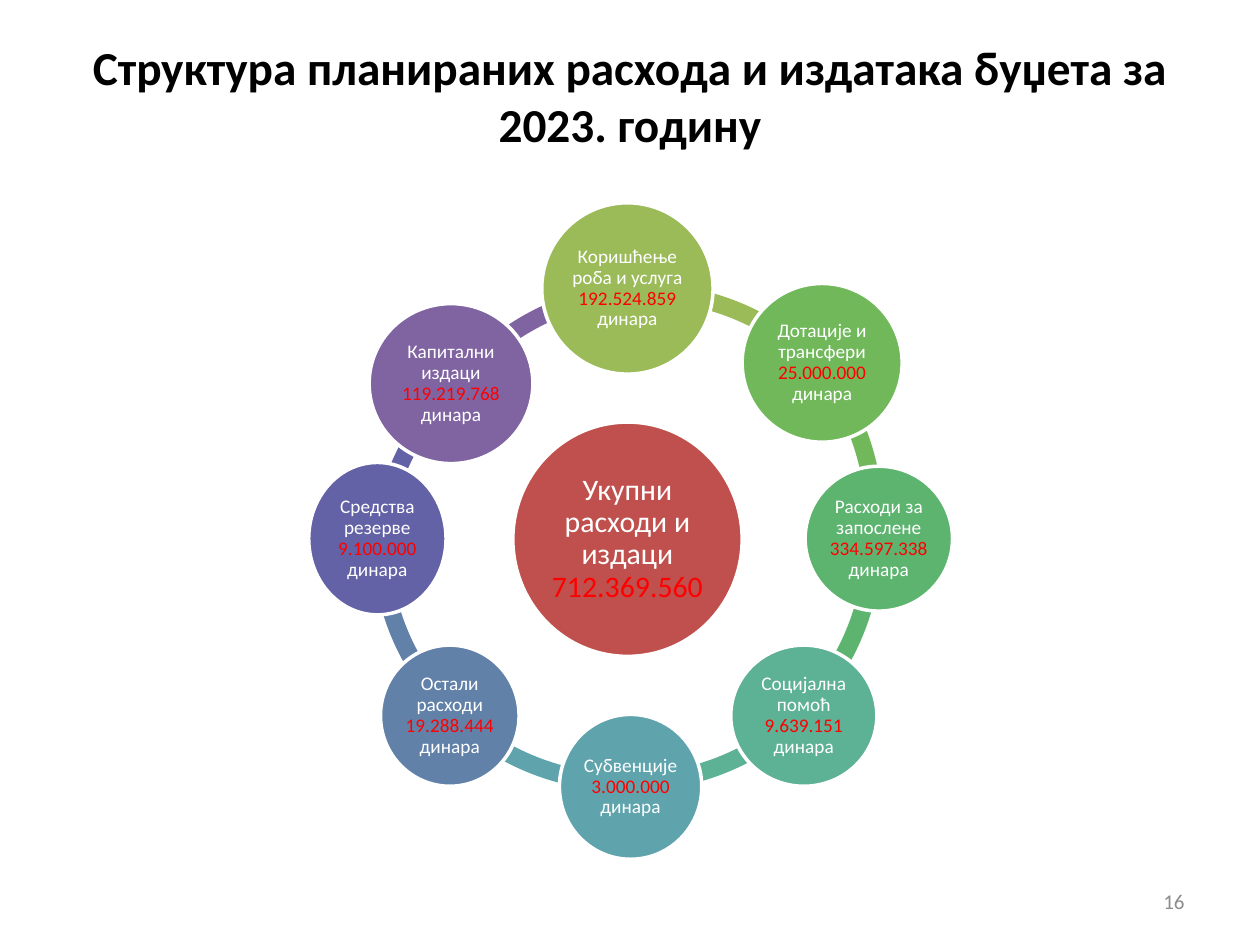
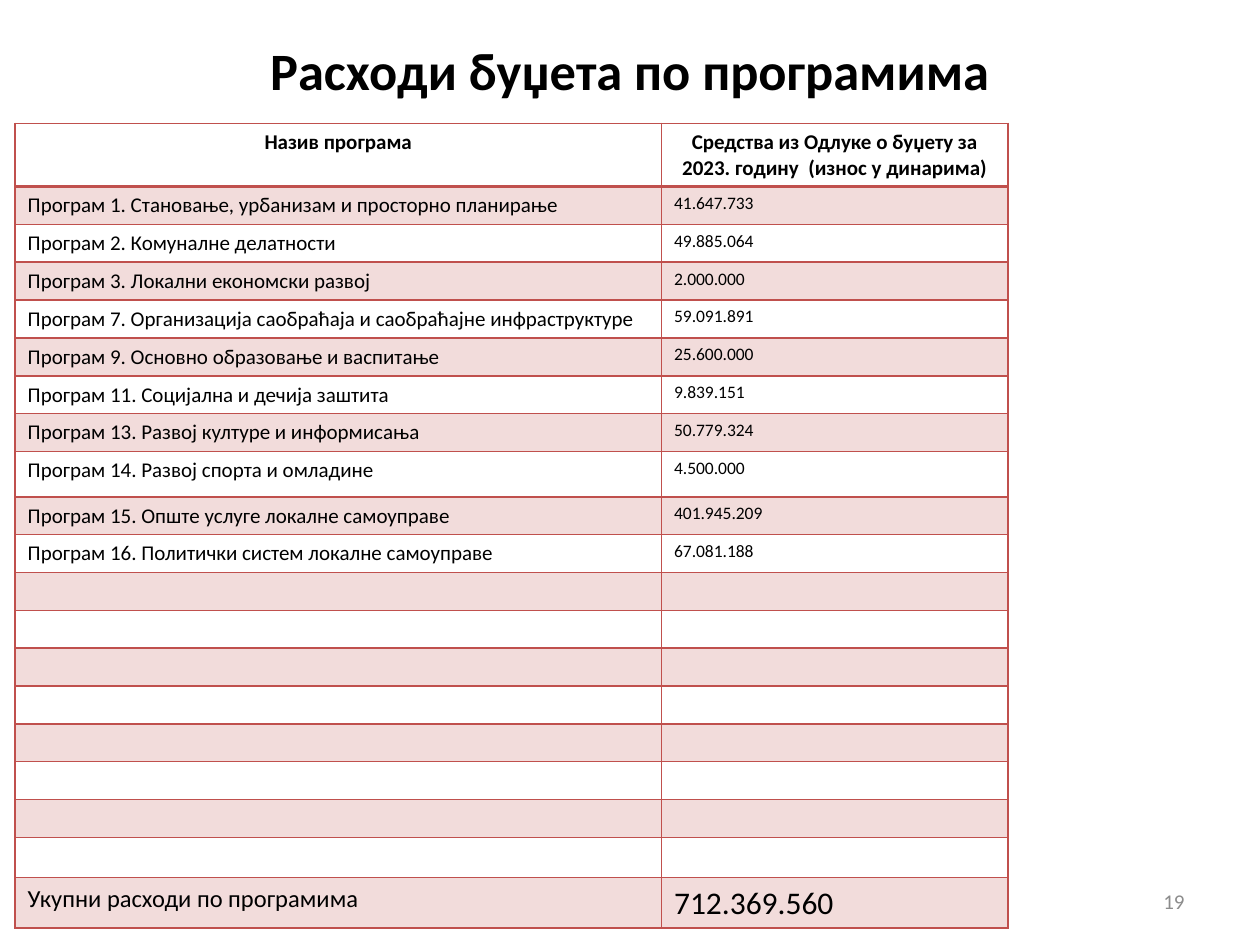
from dataclasses import dataclass
from typing import Any

from lxml import etree
from pptx import Presentation
from pptx.dml.color import RGBColor
from pptx.enum.lang import MSO_LANGUAGE_ID
from pptx.enum.shapes import MSO_SHAPE
from pptx.enum.text import MSO_ANCHOR, PP_ALIGN
from pptx.oxml.ns import qn
from pptx.util import Inches, Pt

LEFT, CENTER, RIGHT = PP_ALIGN.LEFT, PP_ALIGN.CENTER, PP_ALIGN.RIGHT
MIDDLE = MSO_ANCHOR.MIDDLE
ELLIPSE, BLOCK_ARC = MSO_SHAPE.OVAL, MSO_SHAPE.BLOCK_ARC
SERBIAN = MSO_LANGUAGE_ID.SERBIAN_CYRILLIC

FONT = "Calibri"
BLACK = RGBColor(0x00, 0x00, 0x00)
WHITE = RGBColor(0xFF, 0xFF, 0xFF)
GREY = RGBColor(0x8C, 0x8C, 0x8C)
BRICK = RGBColor(0xC0, 0x50, 0x4D)
PALE_BRICK = RGBColor(0xF2, 0xDC, 0xDB)
AMOUNT_RED = RGBColor(0xFF, 0x00, 0x00)
OLIVE = RGBColor(0x9B, 0xBB, 0x59)
LEAF = RGBColor(0x70, 0xB8, 0x5A)
GREEN = RGBColor(0x5C, 0xB4, 0x6F)
SEA = RGBColor(0x5D, 0xB1, 0x95)
TEAL = RGBColor(0x5F, 0xA4, 0xAD)
STEEL = RGBColor(0x61, 0x81, 0xA9)
INDIGO = RGBColor(0x63, 0x62, 0xA6)
PURPLE = RGBColor(0x80, 0x64, 0xA2)

RING_SIZE = 4.05
RING_WIDTH = 0.14
ADJUSTMENT_PER_DEGREE = 0.6
TOTAL = "712.369.560"


@dataclass
class Place:
    left: float
    top: float
    width: float
    height: float

    def lengths(self) -> list[int]:
        return [Inches(n) for n in (self.left, self.top, self.width, self.height)]


@dataclass
class Span:
    text: str
    color: RGBColor = BLACK


@dataclass
class Expense:
    label: str
    amount: str
    color: RGBColor
    circle: Place
    arc_left: float
    arc_top: float
    arc_start: float  # degrees, clockwise from the right
    arc_end: float

    def spans(self) -> list[Span]:
        return [Span(self.label + " ", WHITE), Span(self.amount + " ", AMOUNT_RED),
                Span("динара", WHITE)]


# Clockwise from the top
EXPENSES = [
    Expense("Коришћење роба и услуга", "192.524.859", OLIVE,
            Place(4.3, 1.61, 1.36, 1.36), 3.08, 2.25, 266.33, 315.62),
    Expense("Дотације и трансфери", "25.000.000", LEAF,
            Place(5.89, 2.25, 1.27, 1.26), 2.96, 2.11, 320.92, 4.07),
    Expense("Расходи за запослене", "334.597.338", GREEN,
            Place(6.39, 3.7, 1.17, 1.15), 2.95, 2.25, 0, 45),
    Expense("Социјална помоћ", "9.639.151", SEA,
            Place(5.8, 5.12, 1.16, 1.12), 2.98, 2.23, 45.93, 89.8),
    Expense("Субвенције", "3.000.000", TEAL,
            Place(4.44, 5.67, 1.13, 1.15), 2.93, 2.23, 88.5, 134.1),
    Expense("Остали расходи", "19.288.444", STEEL,
            Place(3.02, 5.12, 1.1, 1.12), 2.95, 2.25, 135, 180),
    Expense("Средства резерве", "9.100.000", INDIGO,
            Place(2.45, 3.67, 1.09, 1.21), 2.94, 2.45, 185.81, 225.94),
    Expense("Капитални издаци", "119.219.768", PURPLE,
            Place(2.93, 2.41, 1.3, 1.27), 3.13, 2.24, 217.83, 264.88),
]

HEADINGS = ("Назив програма",
            "Средства из Одлуке о буџету за 2023. годину  (износ у динарима)")
PROGRAMS = [
    ("Програм 1. Становање, урбанизам и просторно планирање", "41.647.733"),
    ("Програм 2. Комуналне делатности", "49.885.064"),
    ("Програм 3. Локални економски развој", "2.000.000"),
    ("Програм 7. Организација саобраћаја и саобраћајне инфраструктуре", "59.091.891"),
    ("Програм 9. Основно образовање и васпитање", "25.600.000"),
    ("Програм 11. Социјална и дечија заштита", "9.839.151"),
    ("Програм 13. Развој културе и информисања", "50.779.324"),
    ("Програм 14. Развој спорта и омладине", "4.500.000"),
    ("Програм 15. Опште услуге локалне самоуправе", "401.945.209"),
    ("Програм 16. Политички систем локалне самоуправе", "67.081.188"),
]
SPARE_ROWS = 8
TOTAL_ROW = ("Укупни расходи по програмима", TOTAL)
COLUMN_WIDTHS = (5.13, 2.75)
ROW_HEIGHT = 0.3
SPECIAL_HEIGHTS = {0: 0.5, 8: 0.36, 18: 0.32, 19: 0.4}


def apply(target: Any, values: dict[str, Any]) -> None:
    for name, value in values.items():
        setattr(target, name, value)


def write(frame: Any, spans: list[Span], size: float, align: Any,
          bold: bool = False) -> Any:
    """Fill the first paragraph of a text frame and return it."""
    para = frame.paragraphs[0]
    para.alignment = align
    for span in spans:
        run = para.add_run()
        run.text = span.text
        apply(run.font, {"name": FONT, "size": Pt(size), "bold": bold,
                         "language_id": SERBIAN})
        run.font.color.rgb = span.color
    return para


# Parts shared by the slides
def add_label(page: Any, place: Place, span: Span, size: float, align: Any,
              bold: bool = False) -> None:
    box = page.shapes.add_textbox(*place.lengths())
    apply(box.text_frame, {"word_wrap": True, "vertical_anchor": MIDDLE})
    write(box.text_frame, [span], size, align, bold)


def add_page(deck: Any, title: str, title_place: Place, title_size: float,
             number: int) -> Any:
    page = deck.slides.add_slide(deck.slide_layouts[6])
    add_label(page, title_place, Span(title), title_size, CENTER, bold=True)
    add_label(page, Place(7.17, 6.95, 2.33, 0.4), Span(str(number), GREY), 12, RIGHT)
    return page


# Expense ring
def add_filled(page: Any, kind: Any, place: Place, color: RGBColor) -> Any:
    shape = page.shapes.add_shape(kind, *place.lengths())
    shape.shadow.inherit = False
    shape.fill.solid()
    shape.fill.fore_color.rgb = color
    shape.line.fill.background()
    return shape


def add_arc(page: Any, expense: Expense) -> None:
    place = Place(expense.arc_left, expense.arc_top, RING_SIZE, RING_SIZE)
    arc = add_filled(page, BLOCK_ARC, place, expense.color)
    arc.adjustments[0] = expense.arc_start * ADJUSTMENT_PER_DEGREE
    arc.adjustments[1] = expense.arc_end * ADJUSTMENT_PER_DEGREE
    arc.adjustments[2] = RING_WIDTH / RING_SIZE


def add_circle(page: Any, place: Place, color: RGBColor, spans: list[Span],
               size: float) -> None:
    circle = add_filled(page, ELLIPSE, place, color)
    circle.line.color.rgb = WHITE
    circle.line.width = Pt(2)
    margin = Inches(0.02)
    apply(circle.text_frame, {
        "word_wrap": True, "vertical_anchor": MIDDLE, "margin_left": margin,
        "margin_right": margin, "margin_top": margin, "margin_bottom": margin})
    write(circle.text_frame, spans, size, CENTER).line_spacing = 0.9


def build_structure(deck: Any) -> None:
    page = add_page(deck, "Структура планираних расхода и издатака буџета за 2023. годину",
                    Place(0.5, 0.29, 9, 0.93), 27, 16)
    for expense in reversed(EXPENSES):
        add_arc(page, expense)
    add_circle(page, Place(4.07, 3.35, 1.82, 1.86), BRICK,
               [Span("Укупни расходи и издаци ", WHITE), Span(TOTAL, AMOUNT_RED)], 17)
    for expense in EXPENSES:
        add_circle(page, expense.circle, expense.color, expense.spans(), 11)


# Program table
def add_border(cell: Any, side: str, points: float) -> None:
    properties = cell._tc.get_or_add_tcPr()
    line = etree.SubElement(properties, qn("a:ln" + side), w=str(Pt(points)))
    fill = etree.SubElement(line, qn("a:solidFill"))
    etree.SubElement(fill, qn("a:srgbClr"), val=str(BRICK))


def format_cell(cell: Any, row: int, text: str, size: float) -> None:
    header = row == 0
    thick_sides = {0: "B", 1: "T"}
    for side in "LRTB":
        add_border(cell, side, 2 if thick_sides.get(row) == side else 1)
    if row % 2:
        cell.fill.solid()
        cell.fill.fore_color.rgb = PALE_BRICK
    else:
        cell.fill.background()
    if text:
        write(cell.text_frame, [Span(text)], size, CENTER if header else LEFT, header)
    else:  # keeps an empty row from growing
        end = cell.text_frame.paragraphs[0]._p.get_or_add_endParaRPr()
        end.set("sz", str(size * 100))


def build_programs(deck: Any) -> None:
    page = add_page(deck, "Расходи буџета по програмима",
                    Place(0.74, 0.13, 8.52, 0.85), 30, 19)
    rows = [HEADINGS, *PROGRAMS, *[("", "")] * SPARE_ROWS, TOTAL_ROW]
    last = len(rows) - 1
    sizes = {0: (12, 12), last: (14, 18)}
    place = Place(0.12, 0.98, sum(COLUMN_WIDTHS), 6.43)
    table = page.shapes.add_table(len(rows), len(COLUMN_WIDTHS), *place.lengths()).table
    apply(table, {"first_row": False, "horz_banding": False})
    for column, width in zip(table.columns, COLUMN_WIDTHS):
        column.width = Inches(width)
    for row, texts in enumerate(rows):
        table.rows[row].height = Inches(SPECIAL_HEIGHTS.get(row, ROW_HEIGHT))
        for column, (text, size) in enumerate(zip(texts, sizes.get(row, (12, 10)))):
            format_cell(table.cell(row, column), row, text, size)


def main() -> None:
    deck = Presentation()
    deck.slide_width, deck.slide_height = Inches(10), Inches(7.5)
    build_structure(deck)
    build_programs(deck)
    deck.save("out.pptx")


if __name__ == "__main__":
    main()
